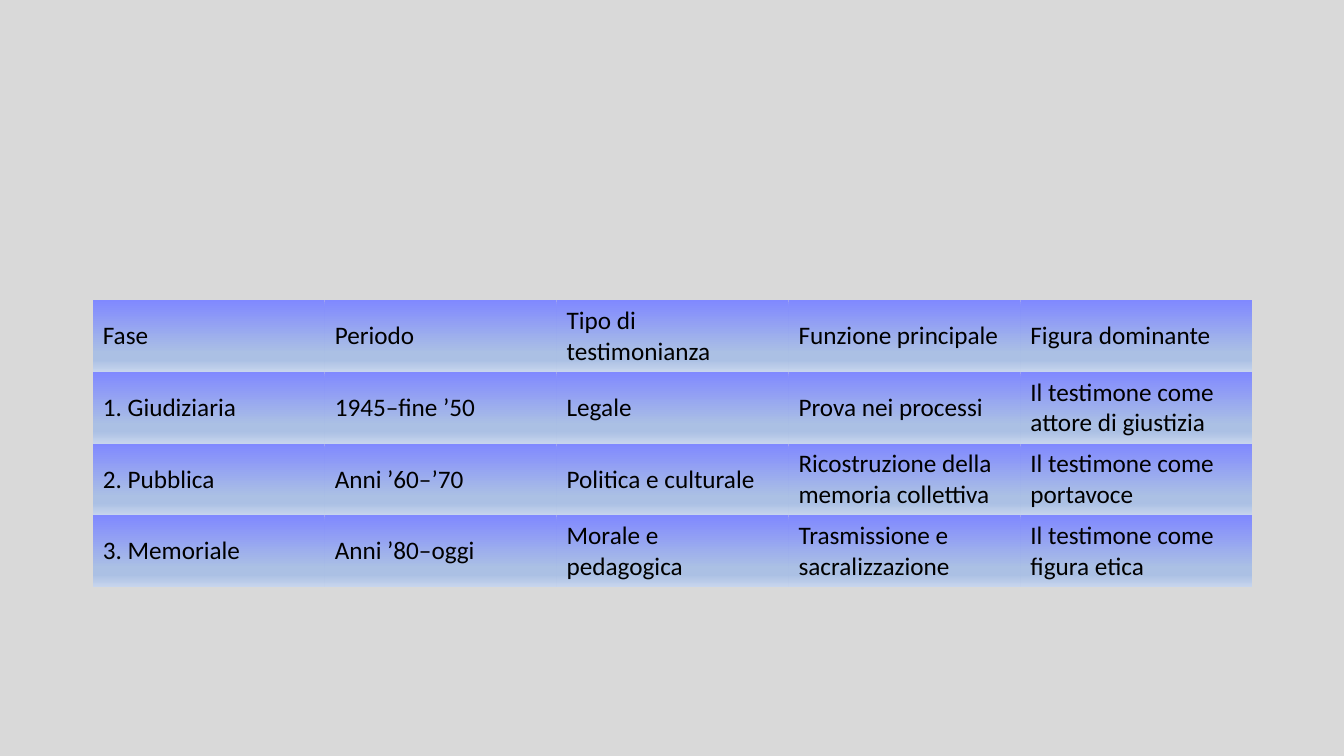
"""Build a slide with a table of the phases of testimony."""
from dataclasses import astuple, dataclass

from pptx import Presentation
from pptx.dml.color import RGBColor
from pptx.enum.text import MSO_ANCHOR
from pptx.oxml import parse_xml
from pptx.oxml.ns import nsdecls, qn
from pptx.slide import Slide
from pptx.table import _Cell
from pptx.util import Inches, Pt

COLORS = {
    "background": "D9D9D9",
    "text": "000000",
    "top": "8089FF",
    "middle": "ABC0E4",
    "bottom": "C7D5ED",
}
GRADIENT = [(0, "top"), (74, "middle"), (83, "middle"), (100, "bottom")]
FONT = {"name": "Calibri", "size": Pt(18), "bold": False}
NO_STYLE = "{2D5ABB26-0587-4C30-8999-92F81FD0307C}"
LEFT, TOP, COL_WIDTH, ROW_HEIGHT = 0.92, 2.98, 2.3, 0.71


@dataclass
class Phase:
    name: str
    period: str
    testimony: str
    purpose: str
    figure: str


PHASES = [
    Phase("Fase", "Periodo", "Tipo di testimonianza",
          "Funzione principale", "Figura dominante"),
    Phase("1. Giudiziaria", "1945–fine ’50", "Legale",
          "Prova nei processi", "Il testimone come attore di giustizia"),
    Phase("2. Pubblica", "Anni ’60–’70", "Politica e culturale",
          "Ricostruzione della memoria collettiva", "Il testimone come portavoce"),
    Phase("3. Memoriale", "Anni ’80–oggi", "Morale e pedagogica",
          "Trasmissione e sacralizzazione", "Il testimone come figura etica"),
]


def fill_gradient(cell: _Cell) -> None:
    stops = "".join(
        f'<a:gs pos="{pos * 1000}"><a:srgbClr val="{COLORS[key]}"/></a:gs>'
        for pos, key in GRADIENT
    )
    cell._tc.get_or_add_tcPr().append(parse_xml(
        f'<a:gradFill {nsdecls("a")} rotWithShape="1"><a:gsLst>{stops}</a:gsLst>'
        '<a:lin ang="5400000" scaled="0"/></a:gradFill>'
    ))


def write_cell(cell: _Cell, text: str) -> None:
    cell.vertical_anchor = MSO_ANCHOR.MIDDLE
    r = cell.text_frame.paragraphs[0].add_run()
    r.text = text
    for attr, value in FONT.items():
        setattr(r.font, attr, value)
    r.font.color.rgb = RGBColor.from_string(COLORS["text"])
    fill_gradient(cell)


def add_phase_table(s: Slide, phases: list[Phase]) -> None:
    rows = [astuple(phase) for phase in phases]
    n_rows, n_cols = len(rows), len(rows[0])
    table = s.shapes.add_table(
        n_rows, n_cols, Inches(LEFT), Inches(TOP),
        Inches(COL_WIDTH * n_cols), Inches(ROW_HEIGHT * n_rows),
    ).table
    table.first_row = table.horz_banding = False
    table._tbl.tblPr.find(qn("a:tableStyleId")).text = NO_STYLE
    for cell, text in zip(table.iter_cells(), (t for row in rows for t in row)):
        write_cell(cell, text)


def main() -> None:
    prs = Presentation()
    prs.slide_width, prs.slide_height = Inches(13.33), Inches(7.5)
    s = prs.slides.add_slide(prs.slide_layouts[6])
    s.background.fill.solid()
    s.background.fill.fore_color.rgb = RGBColor.from_string(COLORS["background"])
    add_phase_table(s, PHASES)
    prs.save("out.pptx")


if __name__ == "__main__":
    main()
